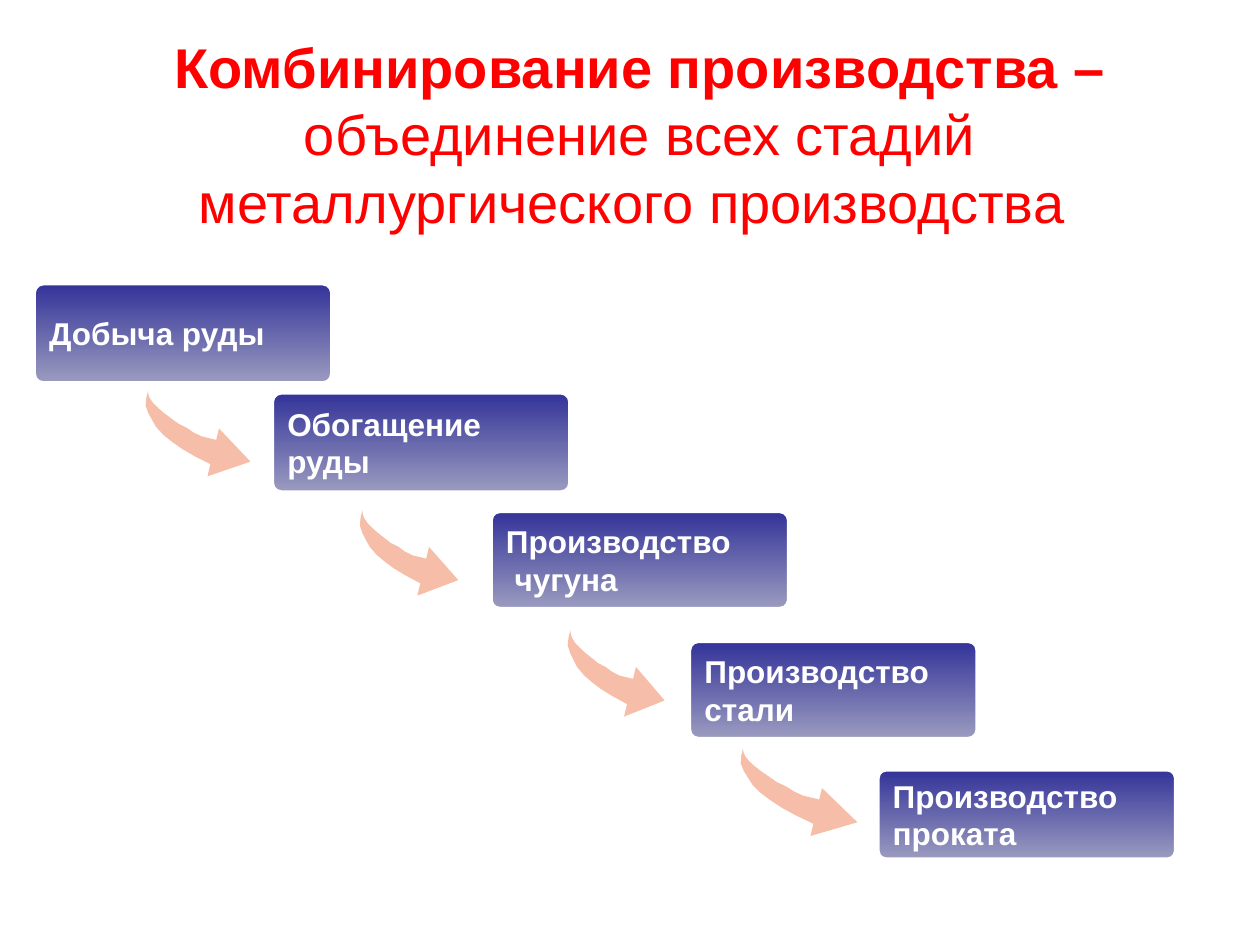
from pptx import Presentation
from pptx.dml.color import RGBColor
from pptx.enum import shapes, text
from pptx.util import Cm, Pt

RED = RGBColor(0xFF, 0x00, 0x00)
WHITE = RGBColor(0xFF, 0xFF, 0xFF)
INDIGO = RGBColor(0x33, 0x33, 0x99)
LAVENDER = RGBColor(0x9B, 0x9B, 0xC0)
PEACH = RGBColor(0xF6, 0xBE, 0xA8)

# Each stage: lines of its label and its box (left, top, width, height) in cm.
STAGES = [
    (["Добыча руды"], (0.69, 5.72, 6, 2)),
    (["Обогащение", "руды"], (5.49, 7.92, 6, 2)),
    (["Производство", " чугуна"], (9.9, 10.31, 6, 1.96)),
    (["Производство", "стали"], (13.9, 12.93, 5.8, 1.96)),
    (["Производство", "проката"], (17.7, 15.52, 6, 1.8)),
]
ARROWS = [
    (2.79, 8.13, 2.34, 1.4),
    (7.11, 10.52, 2.21, 1.42),
    (11.3, 12.93, 2.18, 1.45),
    (14.78, 15.37, 2.59, 1.4),
]
ARROW_TILT = 13.5
# Curved arrow, in percent of its box: lower edge, head, upper edge.
ARROW_OUTLINE = [
    (0, 0), (0, 11), (1, 22), (5, 32), (9.5, 41), (14, 48.5), (22, 57),
    (31, 64), (40.5, 70), (52.5, 76), (67, 82),
    (67, 100), (100, 65), (67, 29), (67, 46),
    (60.5, 46.5), (54, 45.5), (46.5, 43), (39.5, 39), (32, 35.5), (25, 31),
    (18.5, 26), (12.5, 21), (7, 16), (3, 10), (1, 5),
]


def format_font(font, **values):
    color = values.pop("color")
    for name, value in values.items():
        setattr(font, name, value)
    font.color.rgb = color


def add_heading(slide, box):
    heading = slide.shapes.title
    heading.left, heading.top, heading.width, heading.height = map(Cm, box)
    frame = heading.text_frame
    frame.vertical_anchor = text.MSO_ANCHOR.TOP
    frame.auto_size = text.MSO_AUTO_SIZE.NONE
    frame.word_wrap = True
    paragraph = frame.paragraphs[0]
    paragraph.alignment = text.PP_ALIGN.CENTER
    for words, bold in [
        ("Комбинирование производства –", True),
        (" объединение всех стадий металлургического производства ", False),
    ]:
        run = paragraph.add_run()
        run.text = words
        format_font(run.font, name="Arial", size=Pt(32), bold=bold, color=RED)


def add_stage(slide, lines, box):
    stage = slide.shapes.add_shape(
        shapes.MSO_SHAPE.ROUNDED_RECTANGLE, *map(Cm, box))
    stage.shadow.inherit = False
    stage.adjustments[0] = 0.09
    stage.fill.gradient()
    stage.fill.gradient_angle = 270
    for stop, color, position in zip(
            stage.fill.gradient_stops, (INDIGO, LAVENDER), (0, 1)):
        stop.color.rgb = color
        stop.position = position
    stage.line.color.rgb = WHITE
    stage.line.width = Pt(2)

    frame = stage.text_frame
    frame.word_wrap = False
    frame.vertical_anchor = text.MSO_ANCHOR.MIDDLE
    frame.text = "\n".join(lines)
    for paragraph in frame.paragraphs:
        paragraph.alignment = text.PP_ALIGN.LEFT
        format_font(paragraph.runs[0].font, name="Arial", size=Pt(18),
                    bold=True, color=WHITE)


def add_curved_arrow(slide, box):
    left, top, width, height = map(Cm, box)
    builder = slide.shapes.build_freeform(
        *ARROW_OUTLINE[0], scale=(width / 100, height / 100))
    builder.add_line_segments(ARROW_OUTLINE[1:], close=True)
    arrow = builder.convert_to_shape(left, top)
    arrow.rotation = ARROW_TILT
    arrow.shadow.inherit = False
    arrow.fill.solid()
    arrow.fill.fore_color.rgb = PEACH
    arrow.line.fill.background()


def main():
    deck = Presentation()
    deck.slide_width, deck.slide_height = Cm(25.4), Cm(19.05)
    slide = deck.slides.add_slide(deck.slide_layouts[5])
    add_heading(slide, (1.6, 0.53, 22.6, 4.37))
    for lines, box in STAGES:
        add_stage(slide, lines, box)
    for box in ARROWS:
        add_curved_arrow(slide, box)
    deck.save("out.pptx")


if __name__ == "__main__":
    main()
